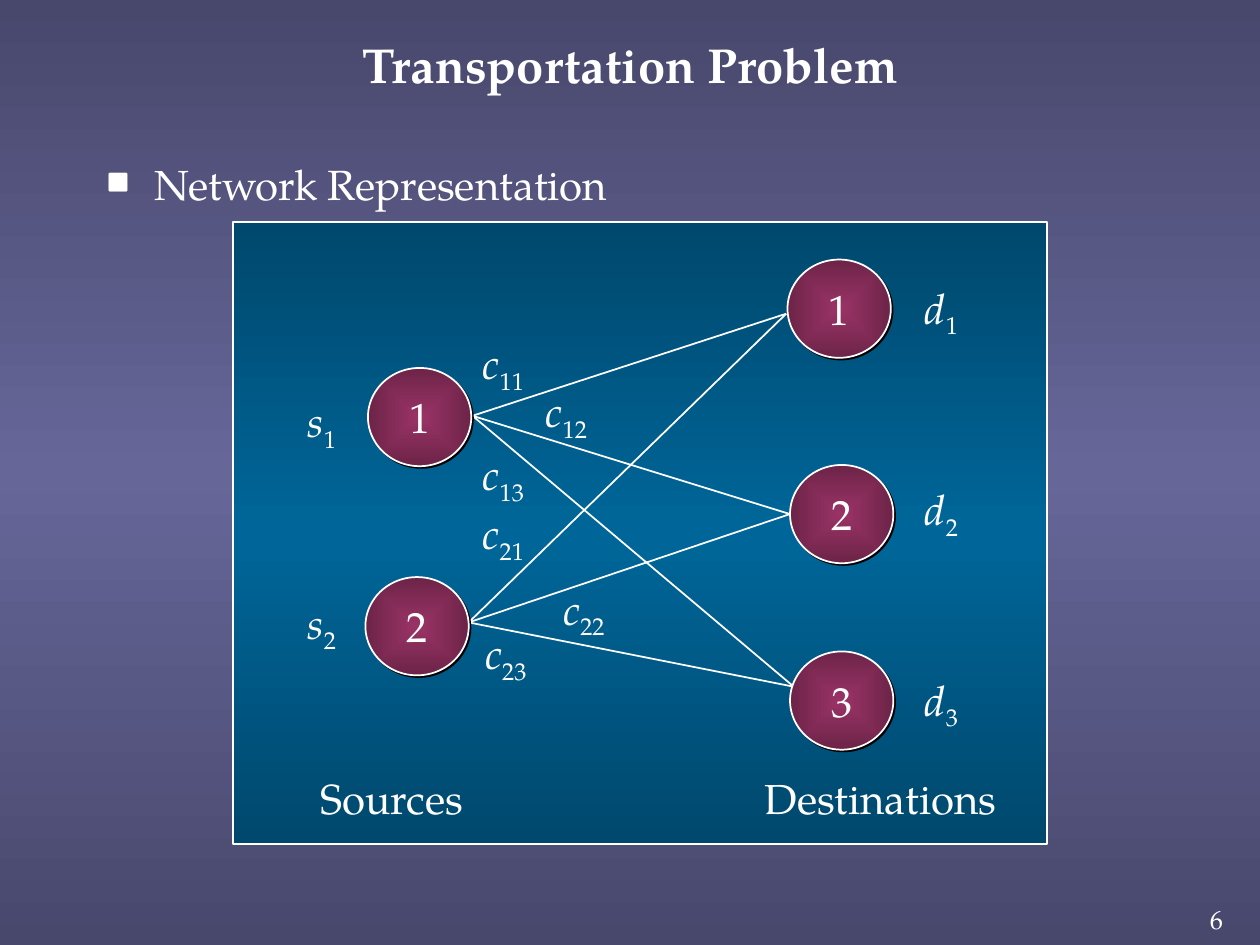
"""Build a slide showing the network representation of the transportation problem."""
from lxml.etree import SubElement
from pptx import Presentation
from pptx.dml.color import RGBColor
from pptx.enum.shapes import MSO_CONNECTOR, MSO_SHAPE
from pptx.enum.text import MSO_ANCHOR, PP_ALIGN
from pptx.oxml import parse_xml
from pptx.oxml.ns import nsdecls, qn
from pptx.util import Inches, Pt

FONT = "TeX Gyre Pagella"
WHITE = RGBColor(0xFF, 0xFF, 0xFF)
BLACK = RGBColor(0, 0, 0)
LAVENDER = RGBColor(0x66, 0x66, 0x99)
BLUE = RGBColor(0, 0x66, 0x99)
PLUM = RGBColor(0x99, 0x33, 0x66)

TITLE = "Transportation Problem"
TOPIC = "Network Representation"
PAGE = "6"
PANEL = (1.85, 1.76, 6.46, 4.94)
NODE_SIZE = (0.82, 0.78)
NODES = [
    ("1", 2.92, 2.92), ("2", 2.9, 4.58),
    ("1", 6.25, 2.06), ("2", 6.27, 3.69), ("3", 6.27, 5.17),
]
SOURCE_ENDS = [(3.75, 3.3), (3.72, 4.94)]
DESTINATION_ENDS = [(6.24, 2.49), (6.27, 4.08), (6.3, 5.45)]
LABEL_WIDTHS = {"c": 0.6, "d": 0.52, "s": 0.48}
LABELS = [
    ("c", "11", 3.71, 2.62), ("c", "12", 4.21, 3), ("c", "13", 3.71, 3.5),
    ("c", "21", 3.71, 3.97), ("c", "22", 4.35, 4.57), ("c", "23", 3.73, 4.92),
    ("d", "1", 7.22, 2.18), ("d", "2", 7.22, 3.78), ("d", "3", 7.22, 5.29),
    ("s", "1", 2.32, 3.08), ("s", "2", 2.32, 4.68),
]
LABEL_HEIGHT = 0.52
CAPTIONS = [("Sources", 2.42, 1.38), ("Destinations", 5.95, 2.09)]
CAPTION_TOP = 6.07
DARK = '<a:shade val="46275"/>'
VERTICAL = '<a:lin ang="5400000" scaled="1"/>'
FROM_CENTRE = ('<a:path path="shape"><a:fillToRect l="50000" t="50000" '
               'r="50000" b="50000"/></a:path>')


def set_gradient(fill, properties, color, stops, direction):
    fill.solid()
    stop_xml = "".join(
        f'<a:gs pos="{position * 1000}"><a:srgbClr val="{color}">{shade}</a:srgbClr></a:gs>'
        for position, shade in stops)
    gradient = parse_xml(f'<a:gradFill {nsdecls("a")} rotWithShape="1">'
                         f'<a:gsLst>{stop_xml}</a:gsLst>{direction}</a:gradFill>')
    properties.replace(properties.find(qn("a:solidFill")), gradient)


def set_text_frame(frame, insets, wrap=False, anchor=MSO_ANCHOR.TOP):
    side, end = map(Inches, insets)
    frame.margin_left = frame.margin_right = side
    frame.margin_top = frame.margin_bottom = end
    frame.word_wrap = wrap
    frame.vertical_anchor = anchor


def set_paragraph(paragraph, runs, size, align=PP_ALIGN.LEFT, bold=False):
    paragraph.alignment = align
    font = paragraph.font
    font.name, font.size, font.bold = FONT, Pt(size), bold
    font.color.rgb = WHITE
    for text in runs:
        paragraph.add_run().text = text


def add_text(slide, runs, box, size=24, insets=(0.12, 0.06), wrap=False,
             anchor=MSO_ANCHOR.TOP, **style):
    frame = slide.shapes.add_textbox(*map(Inches, box)).text_frame
    set_text_frame(frame, insets, wrap, anchor)
    set_paragraph(frame.paragraphs[0], runs, size, **style)
    return frame.paragraphs[0]


def add_topic(slide):
    topic = add_text(slide, [TOPIC], (0.75, 1.21, 4.93, 0.59), insets=(0.1, 0.05), wrap=True)
    properties = parse_xml(
        f'<a:pPr {nsdecls("a")} marL="{Inches(0.38)}" indent="{-Inches(0.38)}">'
        f'<a:buClr><a:srgbClr val="{WHITE}"/></a:buClr><a:buSzPct val="75000"/>'
        f'<a:buFont typeface="{FONT}"/><a:buChar char="■"/></a:pPr>')
    target = topic._p.get_or_add_pPr()
    for name, value in properties.attrib.items():
        target.set(name, value)
    for position, bullet_part in enumerate(list(properties)):
        target.insert(position, bullet_part)


def add_filled(slide, kind, box, color, stops, direction):
    shape = slide.shapes.add_shape(kind, *map(Inches, box))
    set_gradient(shape.fill, shape._element.spPr, color, stops, direction)
    shape.line.color.rgb = WHITE
    shape.line.width = Pt(1)
    shape.shadow.inherit = False
    return shape


def add_edge(slide, start, end):
    edge = slide.shapes.add_connector(MSO_CONNECTOR.STRAIGHT, *map(Inches, start + end))
    edge.line.color.rgb = WHITE
    edge.line.width = Pt(1)
    SubElement(edge._element.spPr, qn("a:effectLst"))


def add_node(slide, number, left, top):
    node = add_filled(slide, MSO_SHAPE.OVAL, (left, top, *NODE_SIZE), PLUM,
                      [(0, ""), (100, DARK)], FROM_CENTRE)
    effects = node._element.spPr.find(qn("a:effectLst"))
    effects.append(parse_xml(
        f'<a:outerShdw {nsdecls("a")} dist="{Pt(1.4)}" dir="2700000" algn="ctr" '
        f'rotWithShape="0"><a:srgbClr val="{BLACK}"/></a:outerShdw>'))
    set_text_frame(node.text_frame, (0.12, 0.06), anchor=MSO_ANCHOR.MIDDLE)
    set_paragraph(node.text_frame.paragraphs[0], [number], 24, PP_ALIGN.CENTER)


def add_label(slide, symbol, index, left, top):
    box = (left, top, LABEL_WIDTHS[symbol], LABEL_HEIGHT)
    letter, subscript = add_text(slide, [symbol, index], box).runs
    letter.font.italic = True
    subscript.font._element.set("baseline", "-25000")


def main():
    deck = Presentation()
    deck.slide_width, deck.slide_height = Inches(10), Inches(7.5)
    slide = deck.slides.add_slide(deck.slide_layouts[6])
    band = [(0, DARK), (50, ""), (100, DARK)]
    backdrop = slide.background.fill
    backdrop.solid()
    set_gradient(backdrop, slide._element.find(".//" + qn("p:bgPr")), LAVENDER, band, VERTICAL)

    add_text(slide, [PAGE], (9.36, 7.12, 0.59, 0.36), size=15, insets=(0.1, 0.05),
             align=PP_ALIGN.CENTER)
    add_filled(slide, MSO_SHAPE.RECTANGLE, PANEL, BLUE, band, VERTICAL)
    add_text(slide, [TITLE], (0.75, 0.06, 8.5, 0.89), size=28, insets=(0.1, 0.05), wrap=True,
             anchor=MSO_ANCHOR.MIDDLE, align=PP_ALIGN.CENTER, bold=True)
    add_topic(slide)
    for start in SOURCE_ENDS:
        for end in DESTINATION_ENDS:
            add_edge(slide, start, end)
    for label in LABELS:
        add_label(slide, *label)
    for caption, left, width in CAPTIONS:
        add_text(slide, [caption], (left, CAPTION_TOP, width, LABEL_HEIGHT))
    for node in NODES:
        add_node(slide, *node)
    deck.save("out.pptx")


if __name__ == "__main__":
    main()
